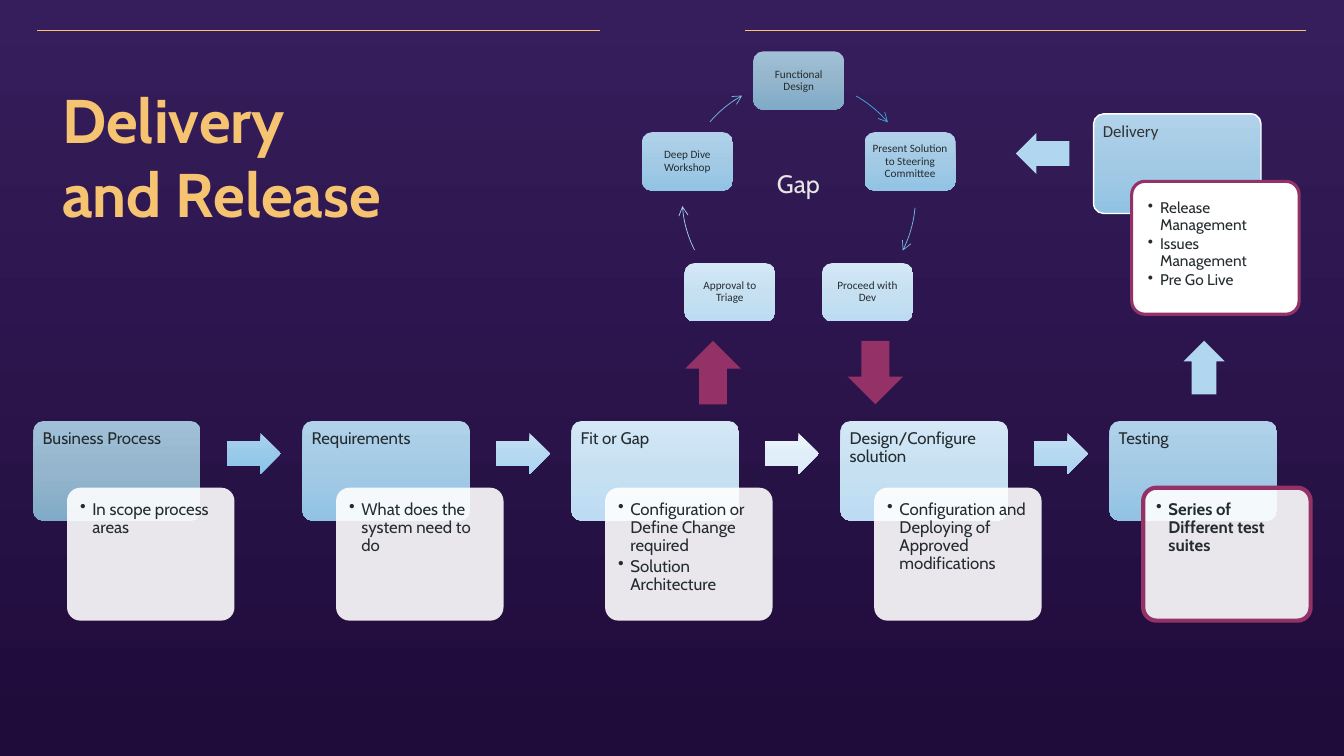
from copy import deepcopy
from math import cos, radians, sin

from pptx import Presentation
from pptx.dml.color import RGBColor
from pptx.enum.shapes import MSO_CONNECTOR, MSO_SHAPE
from pptx.enum.text import MSO_ANCHOR, MSO_AUTO_SIZE, PP_ALIGN
from pptx.oxml.ns import qn
from pptx.util import Cm, Pt

ROUNDED, ARROW = MSO_SHAPE.ROUNDED_RECTANGLE, MSO_SHAPE.RIGHT_ARROW
TOP, MIDDLE = MSO_ANCHOR.TOP, MSO_ANCHOR.MIDDLE
LEFT, CENTER = PP_ALIGN.LEFT, PP_ALIGN.CENTER

GOLD, PLUM, WHITE, INK = "F6C370", "943267", "FFFFFF", "242C2F"
DUSK = ("A1C0D7", "94B5CC", "80ABC8")
SKY = ("B1D2EA", "A3CAE5", "92C3E4")
ICE = ("D4E8F6", "C6E0F2", "BDDCF3")
STEEL_ARROW = ("A8D2ED", "9ACAE9", "87C4EA")
SKY_ARROW = ("C4E1F4", "B6D9F1", "AAD5F1")
PALE_ARROW = ("EEF6FC", "E0EEF9", "DBECF9")

# Lengths are centimetres throughout.
TITLE = ["Delivery", "and Release"]
RULES = [(15.11, 0.94), (32.92, 18.77)]
STEPS = [  # heading, bullets, heading fill, fill of the arrow that follows
    ("Business Process", ["In scope process areas"], DUSK, STEEL_ARROW),
    ("Requirements", ["What does the system need to do"], SKY, SKY_ARROW),
    ("Fit or Gap", ["Configuration or Define Change required", "Solution Architecture"],
     ICE, PALE_ARROW),
    ("Design/Configure solution", ["Configuration and Deploying of Approved modifications"],
     ICE, SKY_ARROW),
    ("Testing", ["Series of Different test suites"], SKY, None),
]
RELEASE = ["Release Management", "Issues Management", "Pre Go Live"]
CYCLE = [  # clockwise from the top
    ("Functional Design", DUSK),
    ("Present Solution to Steering Committee", SKY),
    ("Proceed with Dev", ICE),
    ("Approval to Triage", ICE),
    ("Deep Dive Workshop", SKY),
]
CYCLE_ARCS = [  # start and end in degrees clockwise from the top
    (29.5, 49.8, "40ABDC"),
    (95, 117, "74BCE5"),
    (243.3, 265.8, "A7D2EE"),
    (310.5, 331, "74BCE5"),
]
SOLID_ARROWS = [  # left, top, width, height, rotation, fill, shaft thickness
    (21.26, 8.69, 1.6, 1.4, 90, PLUM, 0.5),
    (17.17, 8.69, 1.6, 1.4, 270, PLUM, 0.5),
    (25.6, 3.35, 1.35, 1.04, 180, "B0D6F0", 0.6),
    (29.67, 8.74, 1.35, 1.04, 270, "B0D6F0", 0.6),
]
STEP_LEFT, STEP_TOP, STEP_PITCH = 0.84, 10.61, 6.78
CARD_WIDTH, HEADING_HEIGHT, BODY_HEIGHT = 4.22, 2.51, 3.35
BODY_OFFSET = (0.85, 1.68)
STEP_ARROW = (4.88, 0.3, 1.36, 1.04)
CYCLE_X, CYCLE_Y, CYCLE_RADIUS = 20.13, 4.98, 2.95
CYCLE_WIDTH, CYCLE_HEIGHT = 2.29, 1.47


def rgb(color):
    return RGBColor.from_string(color)


def add_block(kind, box, fill, adjustments=(), line=None, rotation=0):
    """Add a preset shape; fill is one colour or three gradient colours from the top down."""
    shape = slide.shapes.add_shape(kind, *map(Cm, box))
    shape.shadow.inherit = False
    shape.rotation = rotation
    for index, value in enumerate(adjustments):
        shape.adjustments[index] = value
    if isinstance(fill, str):
        shape.fill.solid()
        shape.fill.fore_color.rgb = rgb(fill)
    else:
        shape.fill.gradient()
        shape.fill.gradient_angle = 270
        stops = shape.element.spPr.find(".//" + qn("a:gsLst"))
        stops.insert(1, deepcopy(stops[0]))
        for stop, color, position in zip(shape.fill.gradient_stops, fill, (0, 0.5, 1)):
            stop.color.rgb = rgb(color)
            stop.position = position
    if line:
        shape.line.color.rgb = rgb(line[0])
        shape.line.width = Pt(line[1])
    else:
        shape.line.fill.background()
    return shape


def write(shape, lines, size, font="Cabin", color=INK, bold=False, insets=(0.25, 0.13),
          anchor=TOP, align=LEFT, spacing=0.9, bullets=False):
    frame = shape.text_frame
    frame.word_wrap = True
    frame.auto_size = MSO_AUTO_SIZE.NONE
    frame.vertical_anchor = anchor
    frame.margin_left = frame.margin_right = Cm(insets[0])
    frame.margin_top = frame.margin_bottom = Cm(insets[1])
    for index, line in enumerate(lines):
        paragraph = frame.add_paragraph() if index else frame.paragraphs[0]
        paragraph.text = line
        paragraph.alignment = align
        paragraph.line_spacing = spacing
        if bullets:
            paragraph.level = 1
            paragraph.space_after = Pt(2)
            properties = paragraph._p.get_or_add_pPr()
            properties.set("marL", str(Cm(0.31)))
            properties.set("indent", str(Cm(-0.31)))
            bullet = properties.makeelement(qn("a:buChar"), {"char": "•"})
            properties.append(bullet)
        paragraph.font.name = font
        paragraph.font.size = Pt(size)
        paragraph.font.bold = bold
        paragraph.font.color.rgb = rgb(color)


def add_heading(left, top, text, fill, line=None, font="Cabin", color=INK):
    heading = add_block(ROUNDED, (left, top, CARD_WIDTH, HEADING_HEIGHT), fill, [0.1], line)
    write(heading, [text], 12, font, color, insets=(0.16, 0.16))


def add_body(left, top, lines, line=None, size=12, bold=False, insets=(0.23, 0.23)):
    body = add_block(ROUNDED, (left, top, CARD_WIDTH, BODY_HEIGHT), WHITE, [0.1], line)
    write(body, lines, size, bold=bold, insets=insets, bullets=True)
    return body


def cycle_point(degrees, radius=CYCLE_RADIUS):
    angle = radians(degrees)
    return CYCLE_X + radius * sin(angle), CYCLE_Y - radius * cos(angle)


def add_cycle_arc(start, end, color, segments=10):
    points = [tuple(map(Cm, cycle_point(start + (end - start) * step / segments, 2.94)))
              for step in range(segments + 1)]
    builder = slide.shapes.build_freeform(*points[0])
    builder.add_line_segments(points[1:], close=False)
    arc = builder.convert_to_shape()
    arc.shadow.inherit = False
    arc.fill.background()
    arc.line.color.rgb = rgb(color)
    arc.line.width = Pt(0.5)
    outline = arc.line._get_or_add_ln()
    outline.append(outline.makeelement(qn("a:tailEnd"), {"type": "arrow"}))


presentation = Presentation()
presentation.slide_width, presentation.slide_height = Cm(33.87), Cm(19.05)
slide = presentation.slides.add_slide(presentation.slide_layouts[5])

background = slide.background.fill
background.gradient()
background.gradient_angle = 270
for stop, color, position in zip(background.gradient_stops, ("361D5C", "200C3B"), (0, 0.98)):
    stop.color.rgb = rgb(color)
    stop.position = position

for start, end in RULES:
    rule = slide.shapes.add_connector(MSO_CONNECTOR.STRAIGHT, Cm(start), Cm(0.76), Cm(end), Cm(0.76))
    rule.line.color.rgb = rgb(GOLD)
    rule.line.width = Pt(0.5)
    properties = rule.element.spPr
    properties.append(properties.makeelement(qn("a:effectLst"), {}))

title = slide.shapes.title
title.left, title.top, title.width, title.height = map(Cm, (1.32, 1.93, 14.25, 5.51))
write(title, TITLE, 44, color=GOLD, bold=True, spacing=1)

for index, (heading, bullets, fill, arrow_fill) in enumerate(STEPS):
    left = STEP_LEFT + index * STEP_PITCH
    last = arrow_fill is None
    add_heading(left, STEP_TOP, heading, fill)
    body = add_body(left + BODY_OFFSET[0], STEP_TOP + BODY_OFFSET[1], bullets,
                    (PLUM, 3) if last else None, bold=last)
    white = body.element.spPr.find(qn("a:solidFill"))[0]
    white.append(white.makeelement(qn("a:alpha"), {"val": "90000"}))
    if not last:
        offset_x, offset_y, width, height = STEP_ARROW
        add_block(ARROW, (left + offset_x, STEP_TOP + offset_y, width, height),
                  arrow_fill, [0.6, 0.5])

for index, (text, fill) in enumerate(CYCLE):
    x, y = cycle_point(index * 360 / len(CYCLE))
    box = (x - CYCLE_WIDTH / 2, y - CYCLE_HEIGHT / 2, CYCLE_WIDTH, CYCLE_HEIGHT)
    write(add_block(ROUNDED, box, fill), [text], 8, "Calibri",
          insets=(0.08, 0.08), anchor=MIDDLE, align=CENTER)
for arc in CYCLE_ARCS:
    add_cycle_arc(*arc)
gap = slide.shapes.add_textbox(Cm(19.33), Cm(4.11), Cm(2.44), Cm(1.02))
write(gap, ["Gap"], 18, color="E7E6E6", spacing=1)

for *box, rotation, fill, shaft in SOLID_ARROWS:
    add_block(ARROW, box, fill, [shaft, 0.5], rotation=rotation)

add_heading(27.56, 2.87, "Delivery", SKY, (WHITE, 1), "Calibri", "323133")
add_body(28.52, 4.57, RELEASE, (PLUM, 2.25), size=11, insets=(0.31, 0.38))

presentation.save("out.pptx")
